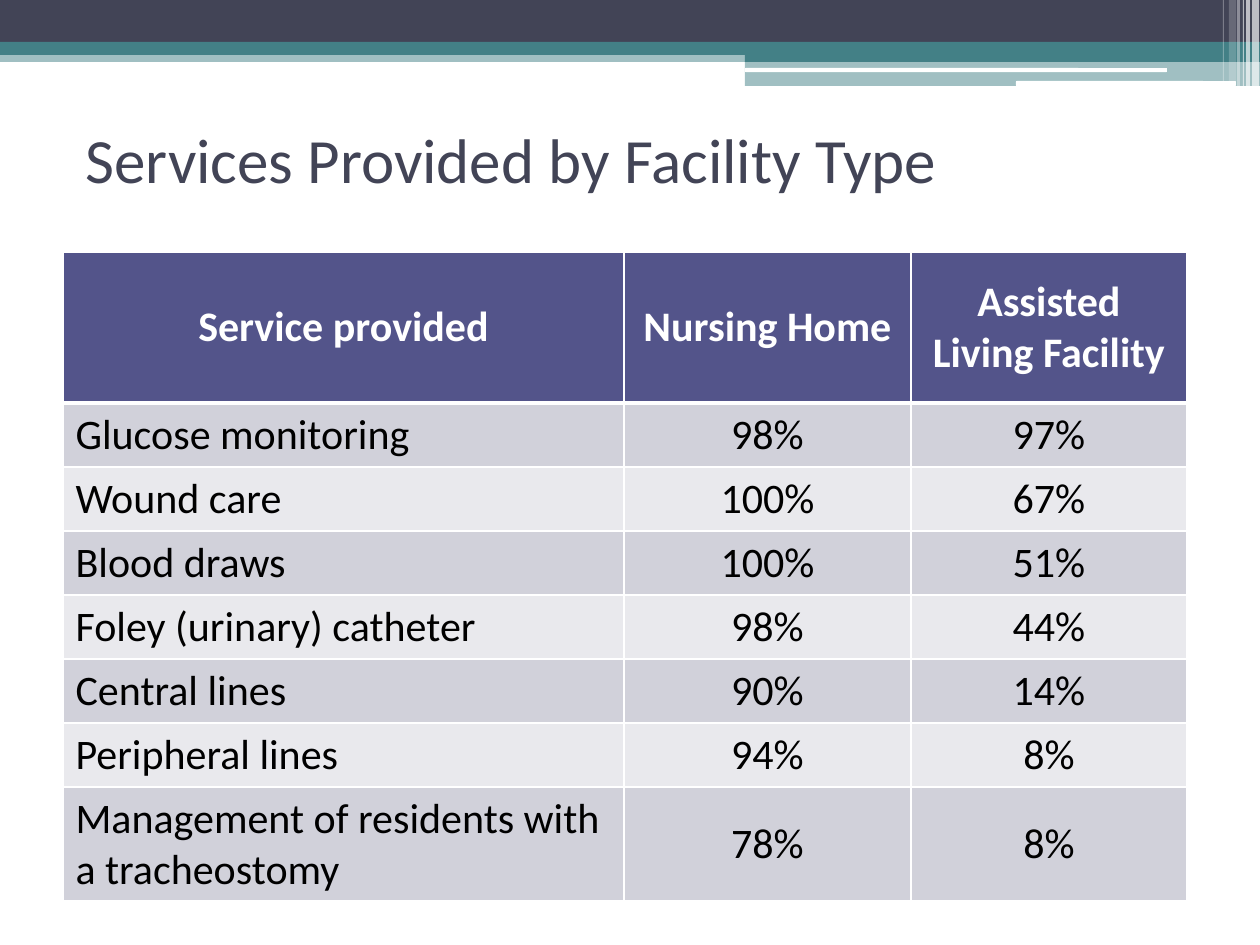
from dataclasses import dataclass

from lxml.etree import SubElement
from pptx import Presentation
from pptx.dml.color import RGBColor
from pptx.enum.shapes import MSO_SHAPE
from pptx.enum.text import MSO_ANCHOR, PP_ALIGN
from pptx.oxml.ns import qn
from pptx.util import Pt

EMU_PER_PX = 914400 / 126


@dataclass(frozen=True)
class Theme:
    font: str = "Calibri"
    title_size: int = 36
    table_size: int = 24
    ink: str = "424456"
    teal: str = "438086"
    white: str = "FFFFFF"
    black: str = "000000"
    header: str = "53548A"
    bands: tuple = ("D1D1DA", "E9E9ED")


THEME = Theme()

SERVICES = [
    ("Service provided", "Nursing Home", "Assisted Living Facility"),
    ("Glucose monitoring", "98%", "97%"),
    ("Wound care", "100%", "67%"),
    ("Blood draws", "100%", "51%"),
    ("Foley (urinary) catheter", "98%", "44%"),
    ("Central lines", "90%", "14%"),
    ("Peripheral lines", "94%", "8%"),
    ("Management of residents with a tracheostomy", "78%", "8%"),
]


def px(length):
    return round(length * EMU_PER_PX)


def style_text(frame, size, color, bold=False, align=PP_ALIGN.LEFT):
    for para in frame.paragraphs:
        para.alignment = align
        for span in para.runs:
            span.font.name = THEME.font
            span.font.size = Pt(size)
            span.font.bold = bold
            span.font.color.rgb = RGBColor.from_string(color)


def add_bar(slide, box, color, opacity=100, kind=MSO_SHAPE.RECTANGLE):
    bar = slide.shapes.add_shape(kind, *map(px, box))
    bar.shadow.inherit = False
    bar.line.fill.background()
    bar.fill.solid()
    bar.fill.fore_color.rgb = RGBColor.from_string(color)
    if opacity < 100:
        color_node = bar.fill._xPr.find(qn("a:solidFill"))[0]
        SubElement(color_node, qn("a:alpha")).set("val", str(opacity * 1000))


def add_banner(slide, left, top, width, height):
    # Full-width bands, then the deeper step on the right
    step = 745
    bands = [
        (0, 50, width, 12, THEME.teal, 50),
        (0, 0, width, 43, THEME.ink, 100),
        (0, 42, width, 13, THEME.teal, 100),
        (step, 49, width - step, 13, THEME.teal, 100),
        (step, 61, width - step, height - 61, THEME.teal, 50),
    ]
    for x, y, w, h, color, opacity in bands:
        add_bar(slide, (left + x, top + y, w, h), color, opacity)

    # White rules
    for x, y, w, h in [(step, 68, 422, 4), (1016, 81, 220, 5)]:
        add_bar(slide, (left + x, top + y, w, h), THEME.white,
                kind=MSO_SHAPE.ROUNDED_RECTANGLE)

    # Translucent stripes at the right end: x, width, height, opacity
    stripes = [
        (1252, 7, height, 65), (1246, 4, height, 65), (1243, 1, height, 60),
        (1237, 3, height, 40), (1229, 7, 81, 20), (1223, 1, 81, 30),
    ]
    for x, w, h, opacity in stripes:
        add_bar(slide, (left + x, top, w, h), THEME.white, opacity)


def add_title(slide, left, top, width, height):
    box = slide.shapes.add_textbox(*map(px, (left, top, width, height)))
    frame = box.text_frame
    frame.word_wrap = True
    frame.vertical_anchor = MSO_ANCHOR.MIDDLE
    frame.text = "Services Provided by Facility Type"
    style_text(frame, THEME.title_size, THEME.ink)


def set_borders(cell, **points):
    properties = cell._tc.get_or_add_tcPr()
    for index, side in enumerate(("lnL", "lnR", "lnT", "lnB")):
        line = SubElement(properties, qn(f"a:{side}"))
        line.set("w", str(Pt(points.get(side, 1))))
        fill = SubElement(line, qn("a:solidFill"))
        SubElement(fill, qn("a:srgbClr")).set("val", THEME.white)
        properties.insert(index, line)


def add_services_table(slide, left, top, width, height):
    columns = (561, 287, width - 561 - 287)
    header_height, row_height = 151, 64
    middle_rows = len(SERVICES) - 2
    last_height = height - header_height - middle_rows * row_height
    rows = [header_height] + [row_height] * middle_rows + [last_height]

    frame = slide.shapes.add_table(len(rows), len(columns),
                                   *map(px, (left, top, width, height)))
    table = frame.table
    for column, size in zip(table.columns, columns):
        column.width = px(size)
    for row, size in zip(table.rows, rows):
        row.height = px(size)

    for r, record in enumerate(SERVICES):
        is_header = r == 0
        fill = THEME.header if is_header else THEME.bands[(r - 1) % 2]
        color = THEME.white if is_header else THEME.black
        for c, text in enumerate(record):
            cell = table.cell(r, c)
            cell.text_frame.text = text
            cell.vertical_anchor = MSO_ANCHOR.MIDDLE
            centred = is_header or c > 0
            style_text(cell.text_frame, THEME.table_size, color, is_header,
                       PP_ALIGN.CENTER if centred else PP_ALIGN.LEFT)
            cell.fill.solid()
            cell.fill.fore_color.rgb = RGBColor.from_string(fill)
            # A heavier rule separates the header from the body
            set_borders(cell, lnT=3 if r == 1 else 1, lnB=3 if is_header else 1)


def main():
    deck = Presentation()
    deck.slide_width, deck.slide_height = px(1260), px(945)
    slide = deck.slides.add_slide(deck.slide_layouts[6])
    add_banner(slide, 0, 0, 1260, 86)
    add_title(slide, 73, 85, 1073, 147)
    add_services_table(slide, 63, 252, 1124, 649)
    deck.save("out.pptx")


if __name__ == "__main__":
    main()
